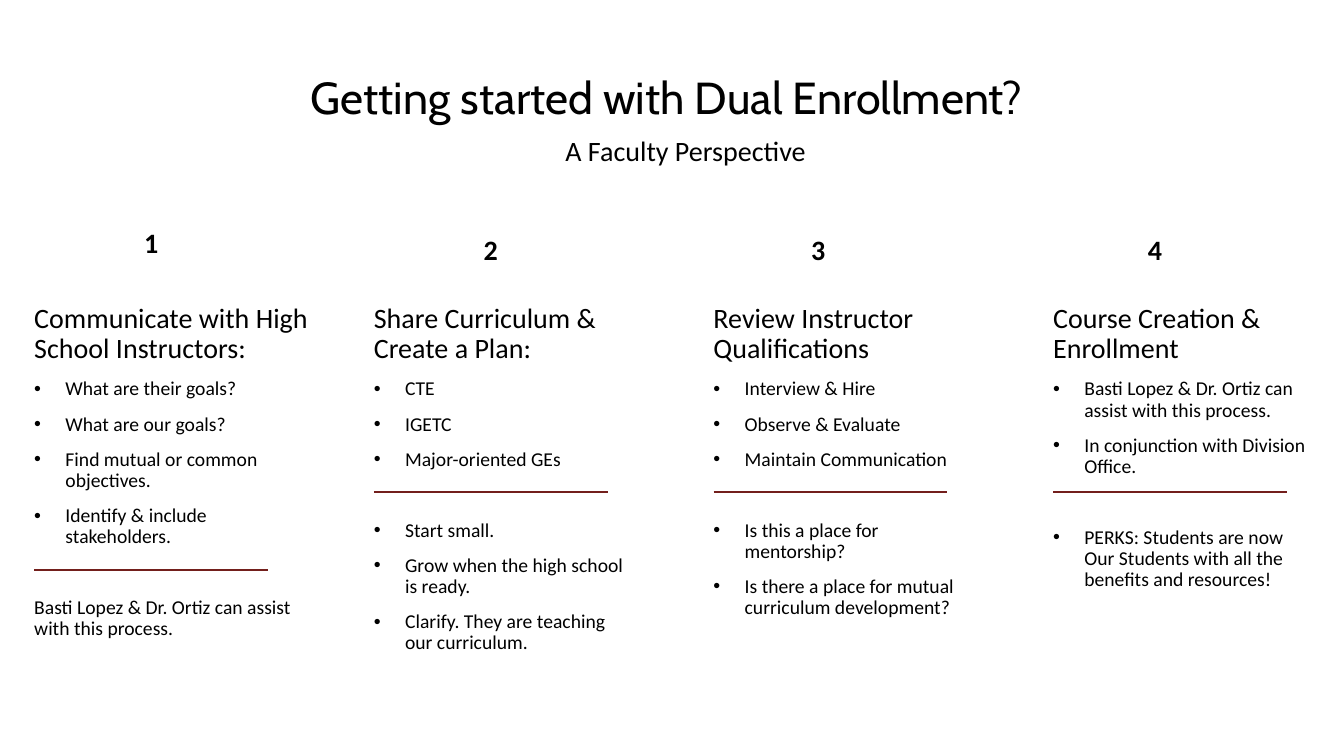
from dataclasses import dataclass

from lxml import etree
from pptx import Presentation
from pptx.dml.color import RGBColor
from pptx.enum.shapes import MSO_CONNECTOR
from pptx.enum.text import MSO_ANCHOR, MSO_AUTO_SIZE, PP_ALIGN
from pptx.oxml.ns import qn
from pptx.util import Inches, Pt

STRAIGHT = MSO_CONNECTOR.STRAIGHT
TOP, MIDDLE, BOTTOM = MSO_ANCHOR.TOP, MSO_ANCHOR.MIDDLE, MSO_ANCHOR.BOTTOM
GROW = MSO_AUTO_SIZE.SHAPE_TO_FIT_TEXT
LEFT, CENTER = PP_ALIGN.LEFT, PP_ALIGN.CENTER


@dataclass(frozen=True)
class Theme:
    ink: RGBColor = RGBColor(0x00, 0x00, 0x00)
    rule: RGBColor = RGBColor(0x73, 0x1F, 0x1C)
    title_font: str = "Cabin"
    body_font: str = "Calibri"
    bullet_font: str = "Arial"
    title_size: Pt = Pt(32)
    heading_size: Pt = Pt(20)
    body_size: Pt = Pt(14)
    rule_width: Pt = Pt(1.5)
    spacing: float = 0.9
    gap: Pt = Pt(10)
    section_gap: Pt = Pt(35.4)
    indent: Inches = Inches(0.31)


@dataclass(frozen=True)
class Box:
    left: float
    top: float
    width: float
    height: float


@dataclass(frozen=True)
class Step:
    heading: str
    points: tuple[str, ...]
    follow_up: tuple[str, ...]
    number_offset: float = 6.45
    number_top: float = 29.2
    width: float = 19.5
    rule_top: float = 65.07
    bulleted_follow_up: bool = True


THEME = Theme()
FIRST_COLUMN, COLUMN_PITCH = 2.55, 25.27
STEP_TOP, STEP_HEIGHT = 39.63, 49.07
NUMBER_WIDTH, NUMBER_HEIGHT = 4.5, 8
RULE_LENGTH = 17.4
TITLE_BOX = Box(22.96, 2.93, 54.09, 14.13)
SUBTITLE_BOX = Box(32, 17.07, 38.03, 5.87)

STEPS = (
    Step(
        "Communicate with High School Instructors:",
        ("What are their goals?", "What are our goals?",
         "Find mutual or common objectives.", "Identify & include stakeholders."),
        ("Basti Lopez & Dr. Ortiz can assist with this process.",),
        number_top=28.4, width=20.48, rule_top=75.38, bulleted_follow_up=False,
    ),
    Step(
        "Share Curriculum & Create a Plan:",
        ("CTE", "IGETC", "Major-oriented GEs"),
        ("Start small.", "Grow when the high school is ready.",
         "Clarify. They are teaching our curriculum."),
    ),
    Step(
        "Review Instructor Qualifications",
        ("Interview & Hire", "Observe & Evaluate", "Maintain Communication"),
        ("Is this a place for mentorship?",
         "Is there a place for mutual curriculum development?"),
        number_offset=5.55,
    ),
    Step(
        "Course Creation & Enrollment",
        ("Basti Lopez & Dr. Ortiz can assist with this process.",
         "In conjunction with Division Office."),
        ("PERKS: Students are now Our Students with all the benefits and resources!",),
        number_offset=5.33,
    ),
)

prs = Presentation()
prs.slide_width, prs.slide_height = Inches(13.33), Inches(7.5)
s = prs.slides.add_slide(prs.slide_layouts[6])


def across(percent: float) -> int:
    return round(prs.slide_width * percent / 100)


def down(percent: float) -> int:
    return round(prs.slide_height * percent / 100)


def apply(target: object, values: dict) -> None:
    for name, value in values.items():
        setattr(target, name, value)


def add_text_frame(box: Box, insets: tuple[float, ...], anchor=TOP):
    sp = s.shapes.add_textbox(
        across(box.left), down(box.top), across(box.width), down(box.height)
    )
    tf = sp.text_frame
    names = ("margin_left", "margin_top", "margin_right", "margin_bottom")
    apply(tf, {"word_wrap": True, "vertical_anchor": anchor})
    apply(tf, dict(zip(names, map(Inches, insets))))
    return tf


def write(p, text: str, size: Pt, font: str = THEME.body_font, bold: bool = False,
          align=LEFT, before: Pt = THEME.gap, spacing: float = THEME.spacing) -> None:
    apply(p, {"alignment": align, "space_before": before, "line_spacing": spacing})
    r = p.add_run()
    r.text = text
    apply(r.font, {"size": size, "name": font, "bold": bold})
    r.font.color.rgb = THEME.ink


def add_bullet(p) -> None:
    pPr = p._p.get_or_add_pPr()
    pPr.set("marL", str(THEME.indent))
    pPr.set("indent", str(-THEME.indent))
    etree.SubElement(pPr, qn("a:buFont")).set("typeface", THEME.bullet_font)
    etree.SubElement(pPr, qn("a:buChar")).set("char", "•")


def add_points(tf, points: tuple[str, ...], first_gap: Pt, bulleted: bool) -> None:
    for i, text in enumerate(points):
        p = tf.add_paragraph()
        write(p, text, THEME.body_size, before=THEME.gap if i else first_gap)
        if bulleted:
            add_bullet(p)


def add_rule(left: float, top: float) -> None:
    line = s.shapes.add_connector(
        STRAIGHT, across(left), down(top), across(left + RULE_LENGTH), down(top)
    )
    line.line.color.rgb = THEME.rule
    line.line.width = THEME.rule_width
    etree.SubElement(line._element.spPr, qn("a:effectLst"))


def add_step(number: int, step: Step) -> None:
    left = FIRST_COLUMN + (number - 1) * COLUMN_PITCH
    tf = add_text_frame(
        Box(left, STEP_TOP, step.width, STEP_HEIGHT), (0, 0.05, 0, 0.05)
    )
    write(tf.paragraphs[0], step.heading, THEME.heading_size)
    add_points(tf, step.points, THEME.gap, True)
    add_points(tf, step.follow_up, THEME.section_gap, step.bulleted_follow_up)
    add_rule(left, step.rule_top)
    number_box = Box(
        left + step.number_offset, step.number_top, NUMBER_WIDTH, NUMBER_HEIGHT
    )
    tf = add_text_frame(number_box, (0, 0, 0, 0), MIDDLE)
    write(tf.paragraphs[0], str(number), THEME.heading_size, bold=True, align=CENTER)


def main() -> None:
    tf = add_text_frame(TITLE_BOX, (0, 0.05, 0.1, 0.05), BOTTOM)
    write(tf.paragraphs[0], "Getting started with Dual Enrollment?",
          THEME.title_size, THEME.title_font, align=CENTER, before=Pt(0))
    tf = add_text_frame(SUBTITLE_BOX, (0.1, 0.05, 0.1, 0.05))
    tf.auto_size = GROW
    write(tf.paragraphs[0], "A Faculty Perspective", THEME.heading_size,
          align=CENTER, before=Pt(0), spacing=1.0)
    for number, step in enumerate(STEPS, start=1):
        add_step(number, step)
    prs.save("out.pptx")


if __name__ == "__main__":
    main()
